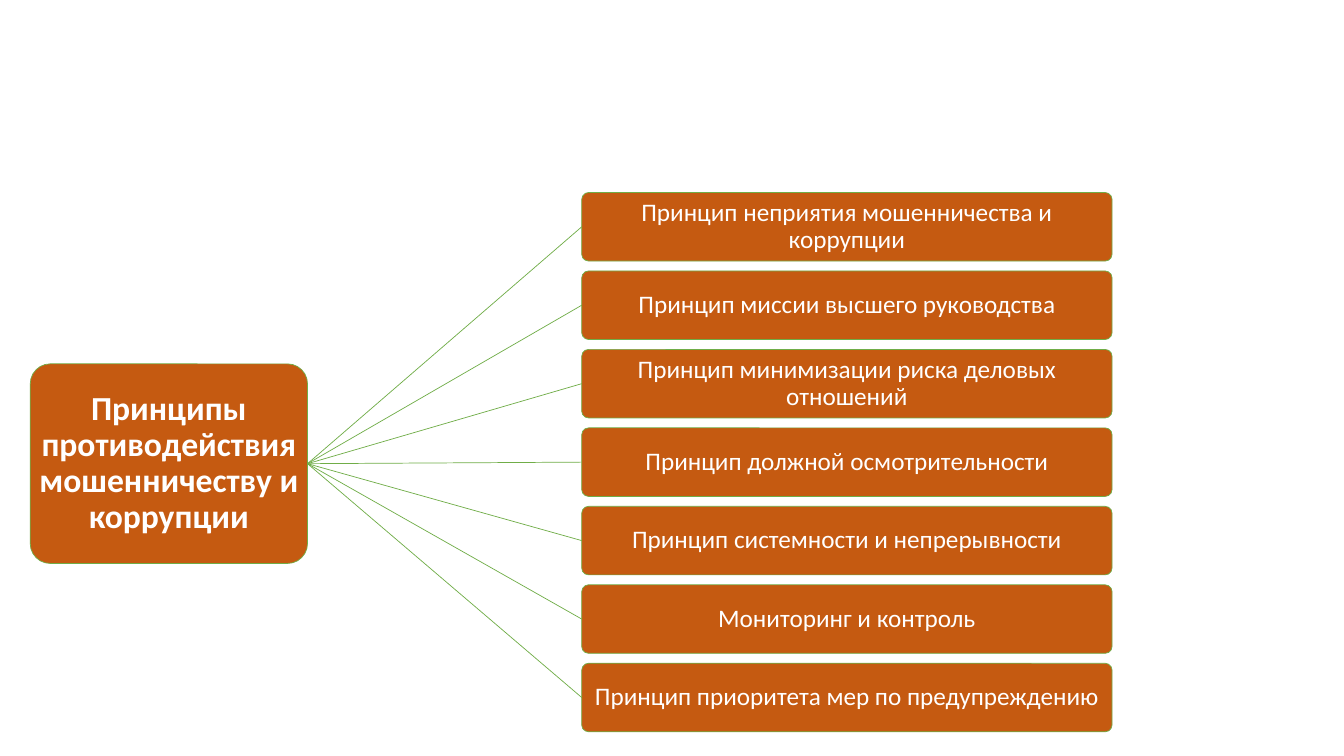
from dataclasses import dataclass

from lxml import etree
from pptx import Presentation
from pptx import util as u
from pptx.dml.color import RGBColor
from pptx.enum import shapes, text
from pptx.oxml import ns
from pptx.shapes.autoshape import Shape
from pptx.slide import Slide

COLOURS = {"box": "C55A11", "line": "70AD47", "text": "FFFFFF"}
LINE_WIDTH = u.Pt(0.5)
LEFT_SITE, RIGHT_SITE = 1, 3
FIRST_TOP, LAST_TOP = 1.91, 6.58
PRINCIPLES = [
    "Принцип неприятия мошенничества и коррупции",
    "Принцип миссии высшего руководства",
    "Принцип минимизации риска деловых отношений",
    "Принцип должной осмотрительности",
    "Принцип системности и непрерывности",
    "Мониторинг и контроль",
    "Принцип приоритета мер по предупреждению",
]


@dataclass
class Node:
    label: str
    left: float
    top: float
    width: float
    height: float
    size: int = 18
    bold: bool = False
    inset: float = 0.01


def colour(name: str) -> RGBColor:
    return RGBColor.from_string(COLOURS[name])


def draw_node(page: Slide, node: Node) -> Shape:
    box = page.shapes.add_shape(
        shapes.MSO_SHAPE.ROUNDED_RECTANGLE,
        u.Inches(node.left), u.Inches(node.top),
        u.Inches(node.width), u.Inches(node.height),
    )
    box.adjustments[0] = 0.1
    box.shadow.inherit = False
    box.fill.solid()
    box.fill.fore_color.rgb = colour("box")
    box.line.color.rgb = colour("line")
    box.line.width = LINE_WIDTH

    frame = box.text_frame
    frame.word_wrap = True
    frame.vertical_anchor = text.MSO_ANCHOR.MIDDLE
    frame.margin_left = frame.margin_right = u.Inches(node.inset)
    frame.margin_top = frame.margin_bottom = u.Inches(node.inset)
    para = frame.paragraphs[0]
    para.alignment = text.PP_ALIGN.CENTER
    para.line_spacing = 0.9
    span = para.add_run()
    span.text = node.label
    span.font.name = "Calibri"
    span.font.size = u.Pt(node.size)
    span.font.bold = node.bold
    span.font.color.rgb = colour("text")
    return box


def draw_branch(page: Slide, start: Shape, end: Shape) -> None:
    branch = page.shapes.add_connector(shapes.MSO_CONNECTOR.STRAIGHT, 0, 0, 0, 0)
    branch.begin_connect(start, RIGHT_SITE)
    branch.end_connect(end, LEFT_SITE)
    branch.line.color.rgb = colour("line")
    branch.line.width = LINE_WIDTH
    etree.SubElement(branch._element.spPr, ns.qn("a:effectLst"))


def main() -> None:
    deck = Presentation()
    deck.slide_width = u.Inches(13.33)
    deck.slide_height = u.Inches(7.5)
    page = deck.slides.add_slide(deck.slide_layouts.get_by_name("Blank"))

    root = draw_node(page, Node(
        "Принципы противодействия мошенничеству и коррупции",
        0.3, 3.61, 2.75, 1.98, size=24, bold=True, inset=0.02,
    ))
    pitch = (LAST_TOP - FIRST_TOP) / (len(PRINCIPLES) - 1)
    for index, label in enumerate(PRINCIPLES):
        node = Node(label, 5.77, FIRST_TOP + index * pitch, 5.26, 0.68)
        draw_branch(page, root, draw_node(page, node))

    deck.save("out.pptx")


if __name__ == "__main__":
    main()
